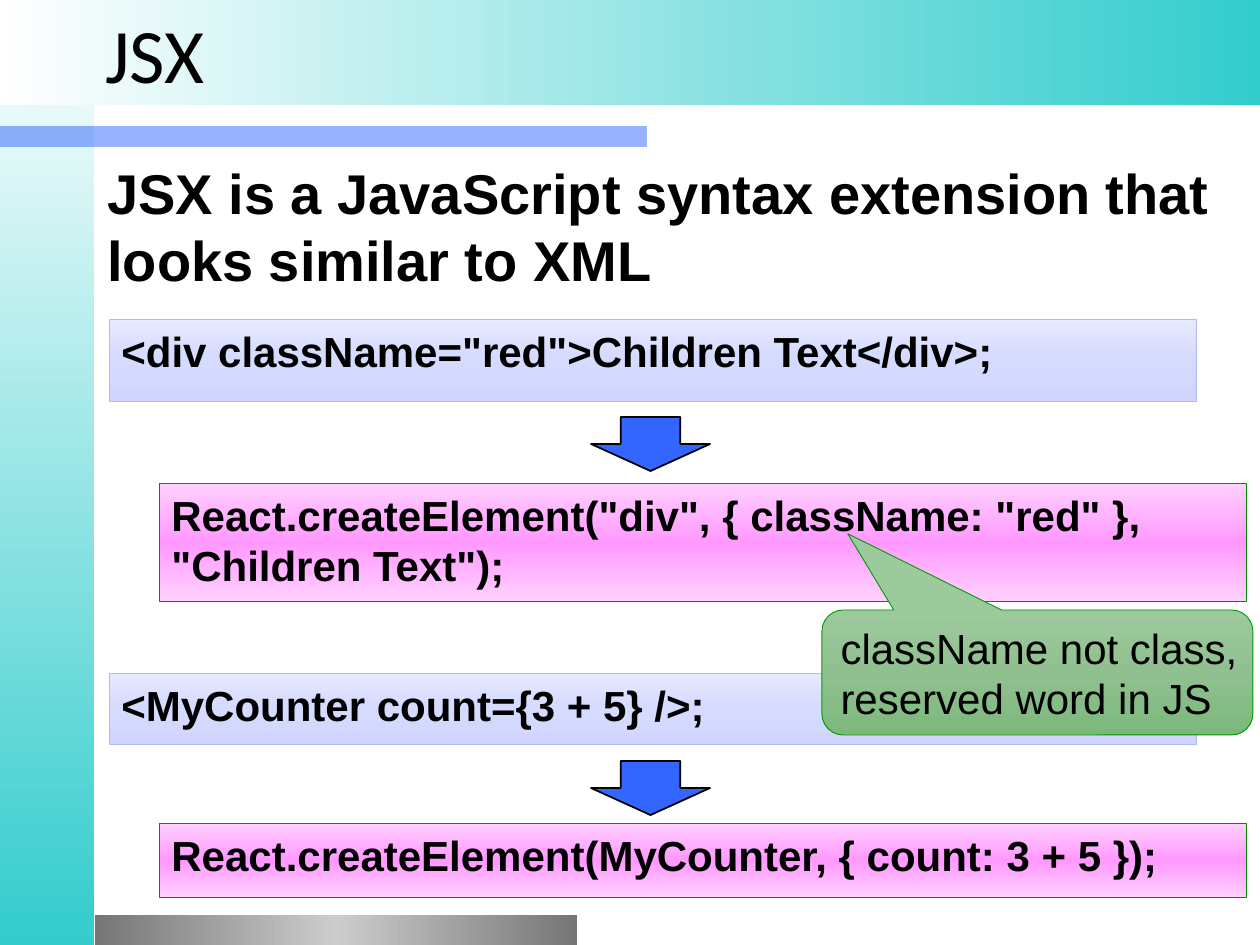
"""Builds a slide that shows how JSX is turned into createElement calls."""
from lxml import etree
from pptx import Presentation
from pptx import util as u
from pptx.dml.color import RGBColor
from pptx.enum import shapes, text
from pptx.oxml.ns import qn

PX = u.Inches(1) / 126
BLACK = RGBColor(0x00, 0x00, 0x00)
WHITE = RGBColor(0xFF, 0xFF, 0xFF)
TEAL = RGBColor(0x33, 0xCC, 0xCC)
BLUE = RGBColor(0x33, 0x66, 0xFF)
GREY = RGBColor(0x76, 0x76, 0x76)
SILVER = RGBColor(0xCC, 0xCC, 0xCC)
LAVENDER = [RGBColor(0xE6, 0xE9, 0xFF), RGBColor(0xD5, 0xDA, 0xFF), RGBColor(0xD0, 0xD6, 0xFF)]
LAVENDER_EDGE = RGBColor(0xAD, 0xB8, 0xFF)
PALE_PINK = RGBColor(0xFF, 0xD1, 0xFF)
PINK = [PALE_PINK, RGBColor(0xFF, 0x99, 0xFF), PALE_PINK]
PINK_EDGE = RGBColor(0x00, 0x8A, 0x00)
GREEN = [RGBColor(0x9D, 0xCA, 0x9D), RGBColor(0x90, 0xC0, 0x90), RGBColor(0x7C, 0xB8, 0x7C)]
GREEN_EDGE = RGBColor(0x00, 0x99, 0x00)
ACROSS, DOWN = 0, 270
SHAPE = shapes.MSO_SHAPE


def px(*lengths):
    return [u.Emu(round(length * PX)) for length in lengths]


class SlideBuilder:
    """Holds the text style and the slide being built."""

    def __init__(self, slide, font="Arial", color=BLACK):
        self.slide = slide
        self.font = font
        self.color = color

    def shape(self, kind, box, colors, angle=DOWN, edge=None, weight=0.5, alpha=None):
        shape = self.slide.shapes.add_shape(kind, *px(*box))
        shape.shadow.inherit = False
        if len(colors) > 1:
            self.gradient(shape, colors, angle)
        else:
            shape.fill.solid()
            shape.fill.fore_color.rgb = colors[0]
        if alpha:
            solid_color = shape.element.spPr.find(f".//{qn('a:srgbClr')}")
            etree.SubElement(solid_color, qn("a:alpha"), val=str(alpha * 1000))
        if edge is None:
            shape.line.fill.background()
        else:
            shape.line.color.rgb = edge
            shape.line.width = u.Pt(weight)
        return shape

    def gradient(self, shape, colors, angle):
        shape.fill.gradient()
        shape.fill.gradient_angle = angle
        stops = shape.element.spPr.find(f".//{qn('a:gsLst')}")
        stops.clear()
        for index, color in enumerate(colors):
            position = 100000 * index // (len(colors) - 1)
            stop = etree.SubElement(stops, qn("a:gs"), pos=str(position))
            etree.SubElement(stop, qn("a:srgbClr"), val=str(color))

    def add_lines(self, shape, lines, size, bold=False, font=None, before=0.0,
                  anchor=text.MSO_ANCHOR.TOP, wrap=True):
        frame = shape.text_frame
        frame.word_wrap = wrap
        frame.vertical_anchor = anchor
        for index, line in enumerate(lines):
            paragraph = frame.add_paragraph() if index else frame.paragraphs[0]
            paragraph.alignment = text.PP_ALIGN.LEFT
            paragraph.space_before = u.Pt(size * before)
            run = paragraph.add_run()
            run.text = line
            run.font.size = u.Pt(size)
            run.font.bold = bold
            run.font.name = font or self.font
            run.font.color.rgb = self.color

    def heading(self, box, line, size, **style):
        self.add_lines(self.slide.shapes.add_textbox(*px(*box)), [line], size, **style)

    def code(self, box, line, colors, edge):
        panel = self.shape(SHAPE.RECTANGLE, box, colors, edge=edge)
        self.add_lines(panel, [line], 24, bold=True, before=0.2)

    def arrow(self, top):
        self.shape(SHAPE.DOWN_ARROW, (591, top, 119, 54), [BLUE], edge=BLACK, weight=1)

    def callout(self, box, lines, adjustments):
        bubble = self.shape(SHAPE.ROUNDED_RECTANGULAR_CALLOUT, box, GREEN, edge=GREEN_EDGE)
        for index, value in enumerate(adjustments):
            bubble.adjustments[index] = value
        self.add_lines(bubble, lines, 24, wrap=False)


def main():
    deck = Presentation()
    deck.slide_width, deck.slide_height = px(1260, 945)
    builder = SlideBuilder(deck.slides.add_slide(deck.slide_layouts[6]))

    builder.shape(SHAPE.RECTANGLE, (-5, 1, 99, 945), [WHITE, TEAL])
    builder.shape(SHAPE.RECTANGLE, (-4, 126, 651, 21), [BLUE], alpha=50)
    builder.shape(SHAPE.RECTANGLE, (95, 915, 482, 31), [GREY, SILVER, GREY], ACROSS)
    builder.shape(SHAPE.RECTANGLE, (0, 0, 1260, 105), [WHITE, TEAL], ACROSS)

    builder.heading((93, 0, 1072, 106), "JSX", 44, font="Calibri",
                    anchor=text.MSO_ANCHOR.MIDDLE)
    builder.heading((95, 152, 1134, 142),
                    "JSX is a JavaScript syntax extension that looks similar to XML",
                    32, bold=True, before=0.2)

    source_left, result_left, code_width = 109, 159, 1087
    examples = [
        (319, 82, '<div className="red">Children Text</div>;', 417, 483, 118,
         'React.createElement("div", { className: "red" }, "Children Text");'),
        (673, 72, "<MyCounter count={3 + 5} />;", 761, 823, 75,
         "React.createElement(MyCounter, { count: 3 + 5 });"),
    ]
    for source_top, source_height, jsx, arrow_top, result_top, result_height, call in examples:
        builder.code((source_left, source_top, code_width, source_height), jsx,
                     LAVENDER, LAVENDER_EDGE)
        builder.code((result_left, result_top, code_width, result_height), call,
                     PINK, PINK_EDGE)
        builder.arrow(arrow_top)

    builder.callout((822, 610, 431, 125), ["className not class,", "reserved word in JS"],
                    (-0.44, -1.11, 0.17))
    deck.save("out.pptx")


if __name__ == "__main__":
    main()
